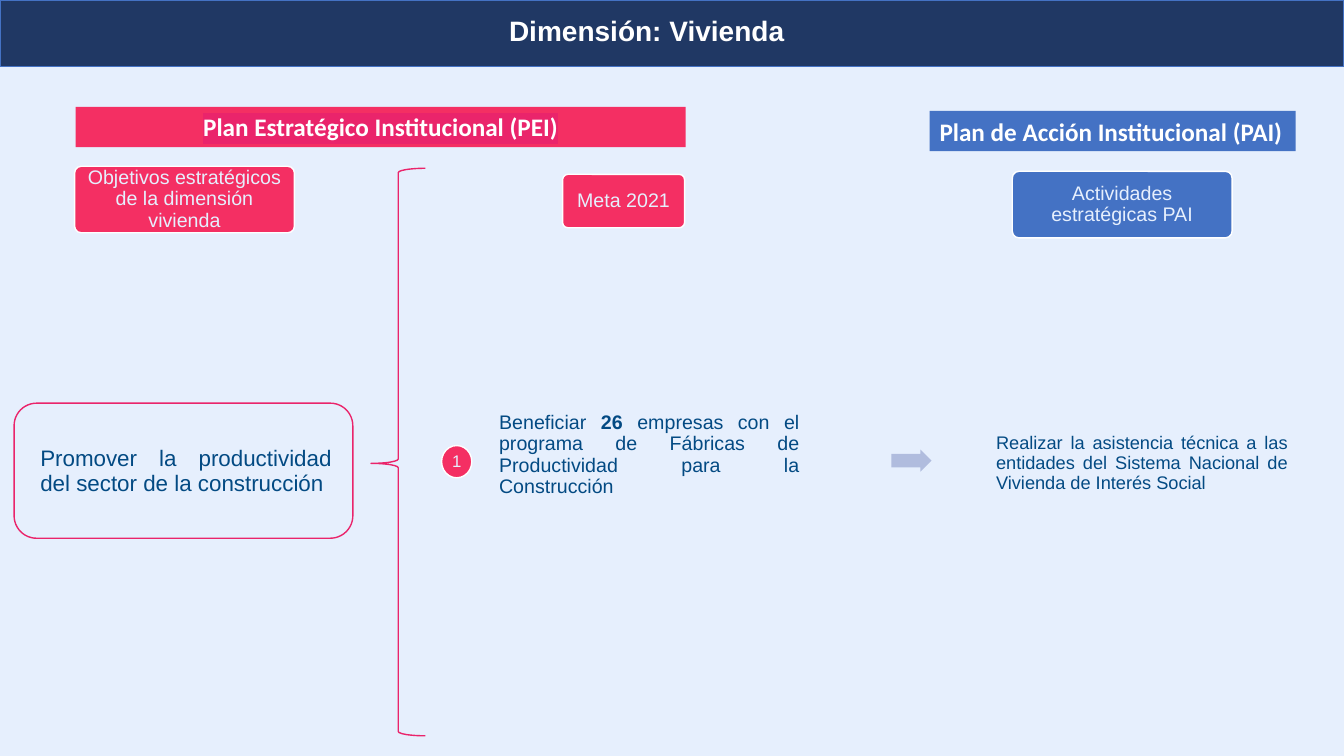
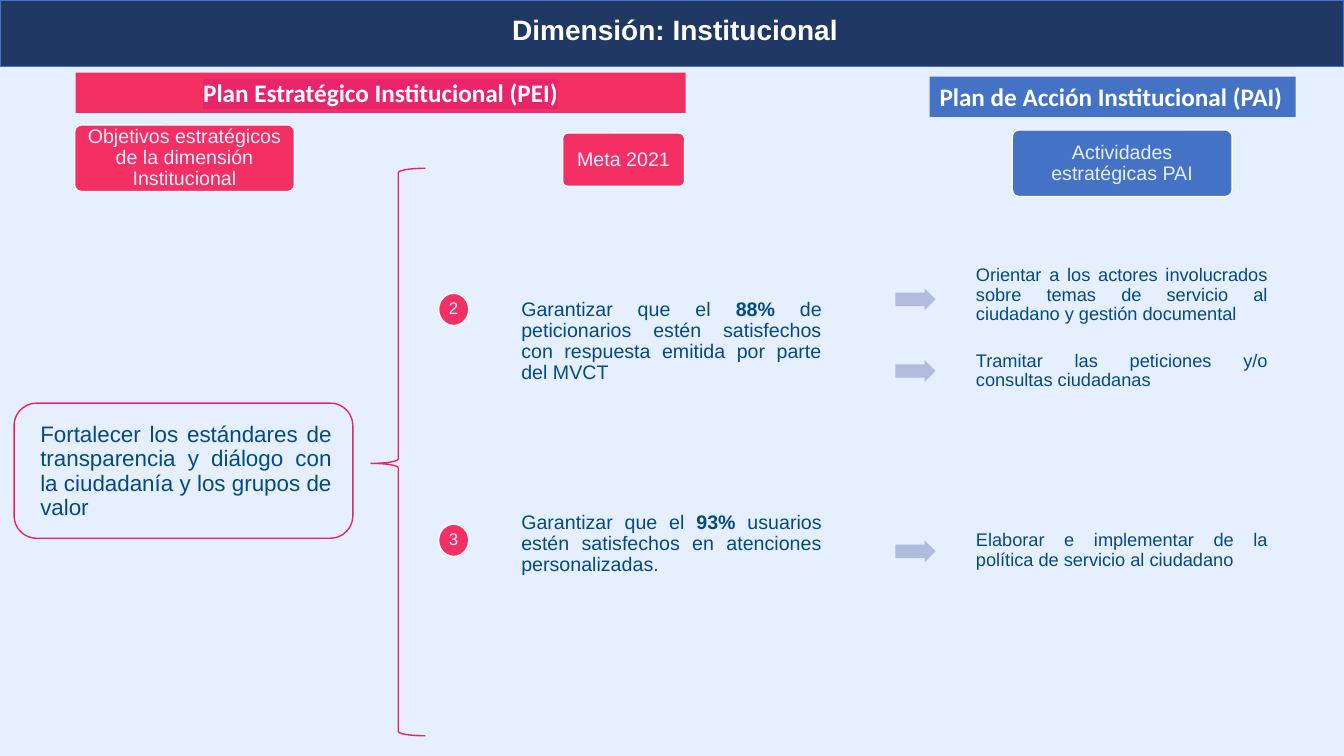
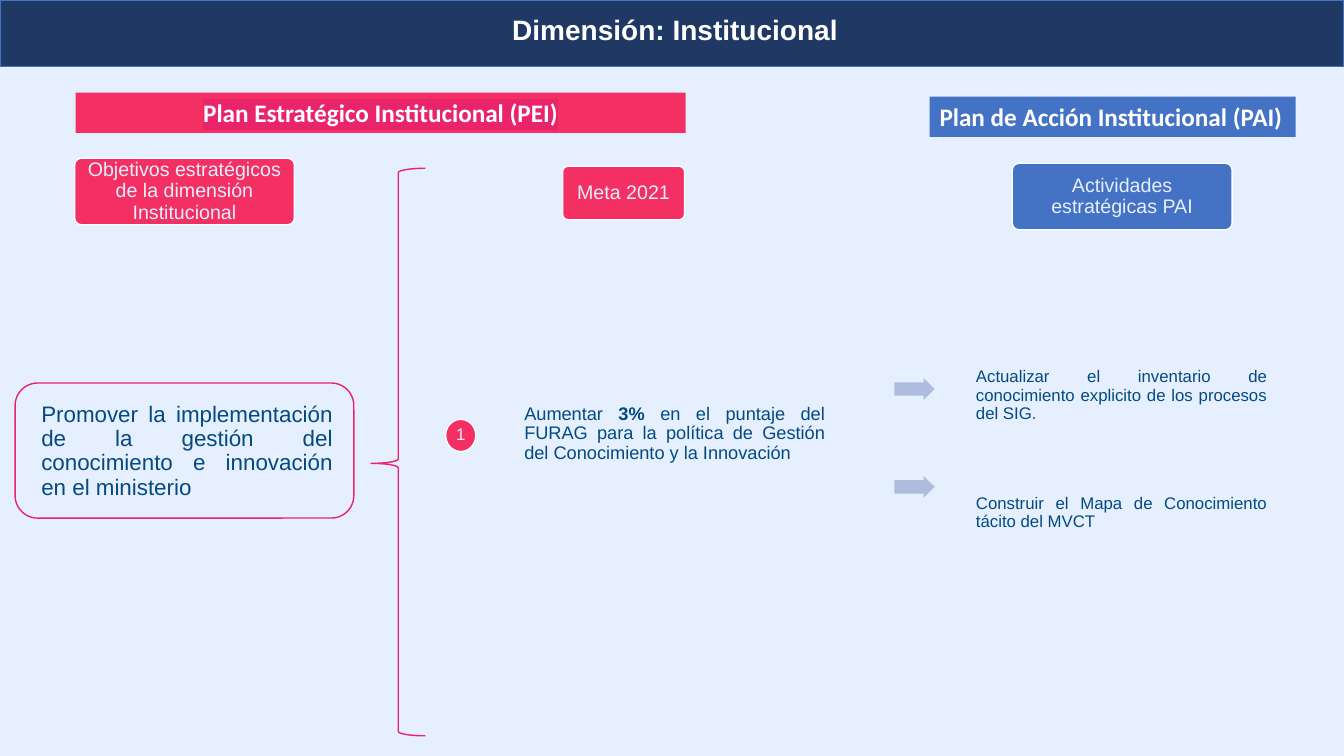
from dataclasses import dataclass
from typing import NamedTuple

from lxml import etree
from pptx import Presentation
from pptx.dml.color import RGBColor
from pptx.enum.shapes import MSO_SHAPE
from pptx.enum.text import MSO_ANCHOR, MSO_AUTO_SIZE, PP_ALIGN
from pptx.oxml.ns import qn
from pptx.util import Inches, Pt

RECT, ROUNDED, OVAL = MSO_SHAPE.RECTANGLE, MSO_SHAPE.ROUNDED_RECTANGLE, MSO_SHAPE.OVAL
ARROW, BRACE = MSO_SHAPE.RIGHT_ARROW, MSO_SHAPE.LEFT_BRACE
LEFT, CENTER, JUSTIFY = PP_ALIGN.LEFT, PP_ALIGN.CENTER, PP_ALIGN.JUSTIFY
TOP, MIDDLE = MSO_ANCHOR.TOP, MSO_ANCHOR.MIDDLE
TITLE_ONLY = 5

CELL = Inches(1)  # one grid column or row
COLS, ROWS = 13.33, 7.5


@dataclass(frozen=True)
class Theme:
    page: str = "E6EFFD"
    navy: str = "203864"
    blue: str = "4472C4"
    red: str = "F42F63"
    magenta: str = "EA246B"
    arrow: str = "B0BCDE"
    ink: str = "034A83"
    white: str = "FFFFFF"
    body_font: str = "Arial"
    banner_font: str = "Calibri"
    title_size: int = 20
    banner_size: int = 18
    goal_size: int = 16
    pill_size: int = 14
    badge_size: int = 12


T = Theme()


class Box(NamedTuple):
    """Left, top, width and height in grid cells."""
    left: float
    top: float
    width: float
    height: float


class Style(NamedTuple):
    size: int
    color: str
    align: PP_ALIGN
    font: str = T.body_font
    bold: bool = False
    spacing: float = 0.9
    margin: float = 0.02
    anchor: MSO_ANCHOR = MIDDLE


class Target(NamedTuple):
    number: str
    text: str
    badge_top: float
    top: float
    height: float


class Activity(NamedTuple):
    text: str
    top: float
    height: float
    arrow_top: float


@dataclass(frozen=True)
class Plan:
    """One slide: a goal, its numbered targets and their activities."""
    title: str
    title_box: Box
    title_align: PP_ALIGN
    dimension: str
    goal: str
    goal_left: float
    goal_top: float
    banner_top: float
    pill_top: float
    badge_left: float
    target_left: float
    arrow_left: float
    activity_left: float
    target_size: int
    activity_size: int
    targets: tuple[Target, ...]
    activities: tuple[Activity, ...]


PILL = Style(T.pill_size, T.page, CENTER, margin=0.04)
BADGE = Style(T.badge_size, T.page, CENTER, margin=0.06)
GOAL = Style(T.goal_size, T.ink, JUSTIFY)
BANNER = Style(T.banner_size, T.white, CENTER, T.banner_font, True, 1.0, 0.1, TOP)

INSTITUTIONAL = dict(title="Dimensión: Institucional", title_box=Box(4.98, 0.13, 4.86, 0.36),
                     title_align=LEFT, dimension="Institucional", activity_left=9.66)

PLANS = (
    Plan(
        title="Dimensión: Vivienda", title_box=Box(4.88, 0.14, 3.07, 0.36),
        title_align=CENTER, dimension="vivienda",
        goal="Promover la productividad del sector de la construcción",
        goal_left=0.14, goal_top=4, banner_top=1.06, pill_top=1.65, badge_left=4.38,
        target_left=4.93, arrow_left=8.84, activity_left=9.86,
        target_size=14, activity_size=13,
        targets=(
            Target("1", "Beneficiar **26** empresas con el programa de Fábricas de "
                   "Productividad para la Construcción", 4.42, 4.12, 0.79),
        ),
        activities=(
            Activity("Realizar la asistencia técnica a las entidades del Sistema "
                     "Nacional de Vivienda de Interés Social", 4.09, 1.02, 4.46),
        ),
    ),
    Plan(
        **INSTITUTIONAL,
        goal="Fortalecer los estándares de transparencia y diálogo con la ciudadanía "
             "y los grupos de valor",
        goal_left=0.14, goal_top=4, banner_top=0.72, pill_top=1.24, badge_left=4.35,
        target_left=5.15, arrow_left=8.88, target_size=14, activity_size=13,
        targets=(
            Target("2", "Garantizar que el **88%** de peticionarios estén satisfechos "
                   "con respuesta emitida por parte del MVCT", 2.91, 2.9, 0.98),
            Target("3", "Garantizar que el **93%** usuarios estén satisfechos en "
                   "atenciones personalizadas.", 5.2, 5.05, 0.7),
        ),
        activities=(
            Activity("Orientar a los actores involucrados sobre temas de servicio al "
                     "ciudadano y gestión documental", 2.42, 1.02, 2.86),
            Activity("Tramitar las peticiones y/o consultas ciudadanas", 3.17, 1.02, 3.57),
            Activity("Elaborar e implementar de la política de servicio al ciudadano",
                     4.95, 1.02, 5.36),
        ),
    ),
    Plan(
        **INSTITUTIONAL,
        goal="Promover la implementación de la gestión del conocimiento e innovación "
             "en el ministerio",
        goal_left=0.15, goal_top=3.8, banner_top=0.92, pill_top=1.57, badge_left=4.42,
        target_left=5.18, arrow_left=8.87, target_size=13, activity_size=12,
        targets=(
            Target("1", "Aumentar **3%** en el puntaje del FURAG para la política de "
                   "Gestión del Conocimiento y la Innovación", 4.16, 3.82, 0.97),
        ),
        activities=(
            Activity("Actualizar el inventario de conocimiento explicito de los procesos "
                     "del SIG.", 3.34, 1.17, 3.75),
            Activity("Construir el Mapa de Conocimiento tácito del MVCT", 4.69, 0.79, 4.72),
        ),
    ),
)


def rgb(color: str) -> RGBColor:
    return RGBColor.from_string(color)


def emu(box: Box) -> list[int]:
    return [round(cells * CELL) for cells in box]


def write(sp, text: str, style: Style, wrap: bool = True) -> None:
    """Fill a shape with one paragraph; **marks** enclose bold words."""
    tf = sp.text_frame
    tf.auto_size = MSO_AUTO_SIZE.NONE
    tf.word_wrap = wrap
    tf.vertical_anchor = style.anchor
    tf.margin_left = tf.margin_right = Inches(style.margin)
    tf.margin_top = tf.margin_bottom = Inches(min(style.margin, 0.05))
    p = tf.paragraphs[0]
    p.alignment = style.align
    p.line_spacing = style.spacing
    p.font.name = style.font
    p.font.size = Pt(style.size)
    p.font.bold = style.bold
    p.font.color.rgb = rgb(style.color)
    for i, part in enumerate(text.split("**")):
        r = p.add_run()
        r.text = part
        if i % 2:
            r.font.bold = True


def add_shape(s, kind, box: Box, fill: str = "", line: str = "", adjust: tuple = ()):
    sp = s.shapes.add_shape(kind, *emu(box))
    sp.shadow.inherit = False
    for i, value in enumerate(adjust):
        sp.adjustments[i] = value
    if fill:
        sp.fill.solid()
        sp.fill.fore_color.rgb = rgb(fill)
    else:
        sp.fill.background()
    if line:
        sp.line.color.rgb = rgb(line)
        sp.line.width = Pt(1)
    else:
        sp.line.fill.background()
    return sp


def add_text(s, box: Box, text: str, style: Style) -> None:
    write(s.shapes.add_textbox(*emu(box)), text, style)


def highlight(r, color: str) -> None:
    mark = etree.SubElement(r.font._element, qn("a:highlight"))
    etree.SubElement(mark, qn("a:srgbClr")).set("val", color)


def add_title(s, plan: Plan) -> None:
    sp = s.shapes.title
    sp.left, sp.top, sp.width, sp.height = emu(plan.title_box)
    write(sp, plan.title, Style(T.title_size, T.white, plan.title_align, bold=True, margin=0.1))


def add_headers(s, plan: Plan) -> None:
    y = plan.pill_top
    pills = (
        (f"Objetivos estratégicos de la dimensión {plan.dimension}",
         Box(0.74, y, 2.18, 0.66), T.red),
        ("Meta 2021", Box(5.58, y + 0.08, 1.21, 0.53), T.red),
        ("Actividades estratégicas PAI", Box(10.04, y + 0.05, 2.18, 0.66), T.blue),
    )
    for text, box, fill in pills:
        write(add_shape(s, ROUNDED, box, fill, T.white, (0.1,)), text, PILL)

    pei = add_shape(s, RECT, Box(0.75, plan.banner_top, 6.05, 0.4), T.red)
    write(pei, "Plan Estratégico Institucional (PEI)", BANNER)
    highlight(pei.text_frame.paragraphs[0].runs[0], T.magenta)
    pai = add_shape(s, RECT, Box(9.22, plan.banner_top + 0.04, 3.63, 0.4), T.blue)
    write(pai, "Plan de Acción Institucional (PAI)", BANNER._replace(align=LEFT), wrap=False)


def add_goal(s, plan: Plan) -> None:
    x, y = plan.goal_left, plan.goal_top
    add_shape(s, ROUNDED, Box(x, y, 3.36, 1.34), line=T.magenta)
    add_text(s, Box(x + 0.24, y + 0.02, 2.93, 1.32), plan.goal, GOAL)
    add_shape(s, BRACE, Box(3.68, 1.67, 0.54, 5.63), line=T.magenta, adjust=(0.08, 0.52))


def add_targets(s, plan: Plan) -> None:
    style = Style(plan.target_size, T.ink, JUSTIFY)
    for target in plan.targets:
        badge = Box(plan.badge_left, target.badge_top, 0.3, 0.32)
        write(add_shape(s, OVAL, badge, T.red, T.white), target.number, BADGE)
        add_text(s, Box(plan.target_left, target.top, 3.02, target.height), target.text, style)


def add_activities(s, plan: Plan) -> None:
    style = Style(plan.activity_size, T.ink, JUSTIFY)
    for act in plan.activities:
        add_shape(s, ARROW, Box(plan.arrow_left, act.arrow_top, 0.4, 0.22), T.arrow,
                  adjust=(0.6, 0.5))
        add_text(s, Box(plan.activity_left, act.top, 2.93, act.height), act.text, style)


def add_layout_band(s) -> None:
    """Draw the title band and move it to the back of the shared layout."""
    band = add_shape(s, RECT, Box(0, 0, COLS, 0.66), T.navy, T.blue)
    s.slide_layout.shapes.element.insert(2, band.element)


def main() -> None:
    prs = Presentation()
    prs.slide_width, prs.slide_height = Inches(COLS), Inches(ROWS)
    layout = prs.slide_layouts[TITLE_ONLY]
    fill = prs.slide_master.background.fill
    fill.solid()
    fill.fore_color.rgb = rgb(T.page)
    for i, plan in enumerate(PLANS):
        s = prs.slides.add_slide(layout)
        if i == 0:
            add_layout_band(s)
        add_title(s, plan)
        add_headers(s, plan)
        add_goal(s, plan)
        add_targets(s, plan)
        add_activities(s, plan)
    prs.save("out.pptx")


if __name__ == "__main__":
    main()
